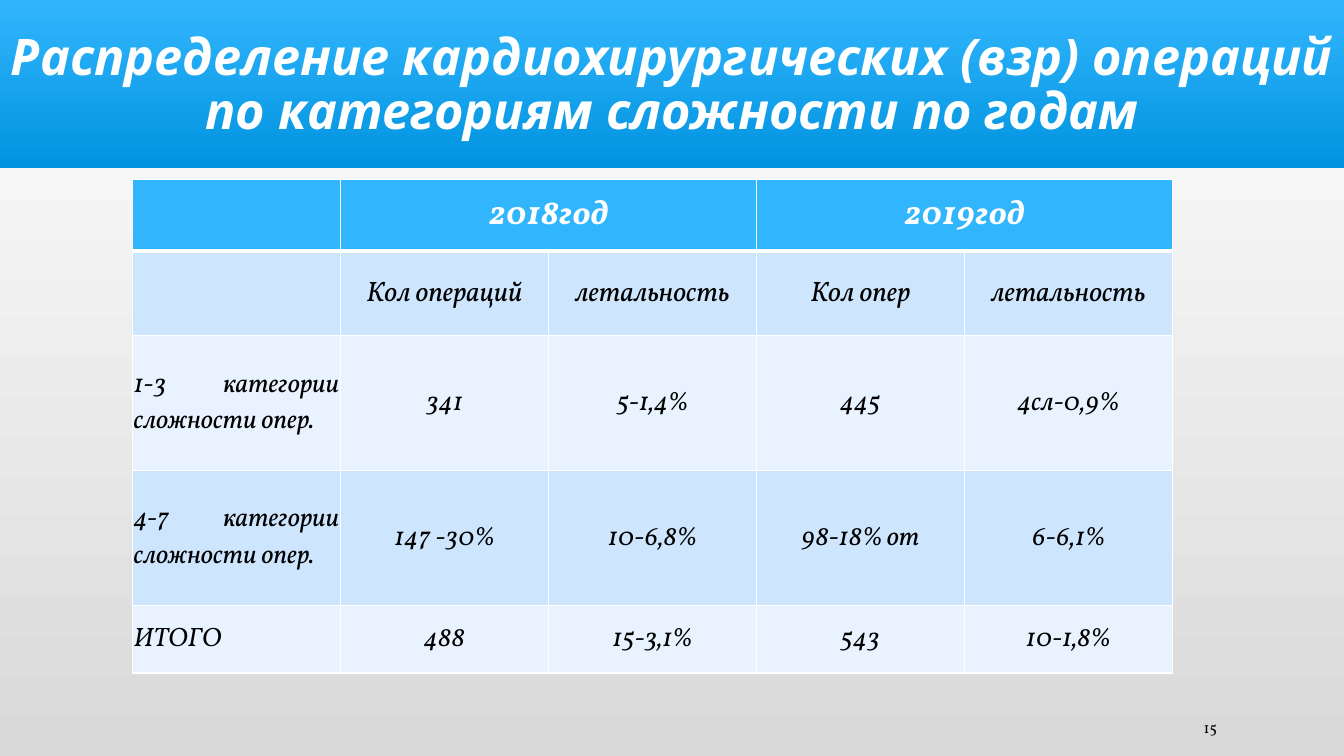
from pptx import Presentation
from pptx.dml.color import RGBColor
from pptx.enum.shapes import MSO_SHAPE
from pptx.enum.text import MSO_ANCHOR, MSO_AUTO_SIZE, PP_ALIGN
from pptx.util import Cm, Pt
from lxml import etree

RECT = MSO_SHAPE.RECTANGLE
MIDDLE = MSO_ANCHOR.MIDDLE
FIXED = MSO_AUTO_SIZE.NONE
CENTER, RIGHT, JUSTIFY = PP_ALIGN.CENTER, PP_ALIGN.RIGHT, PP_ALIGN.JUSTIFY
NS = "http://schemas.openxmlformats.org/drawingml/2006/main"

# Content
TITLE = "Распределение кардиохирургических (взр) операций по категориям сложности по годам"
ROWS = [
    ("", "2018год", "", "2019год", ""),
    ("", "Кол операций", "летальность", "Кол опер", "летальность"),
    ("1-3 категории сложности опер.", "341", "5-1,4%", "445", "4сл-0,9%"),
    ("4-7 категории сложности опер.", "147 -30%", "10-6,8%", "98-18% от", "6-6,1%"),
    ("ИТОГО", "488", "15-3,1%", "543", "10-1,8%"),
]
PAGE = "15"


class Theme:
    head_font, body_font = "Open Sans", "Vollkorn"
    white, black = "FFFFFF", "000000"
    band = ("31B6FD", "0293E0")
    back = ("FFFFFF", "D9D9D9")
    header = "31B6FD"
    stripes = ("CEE5FE", "E8F3FF")
    title_size, page_size = 36, 11
    row_sizes = (24, 20, 19, 19, 19)
    thin, thick = 1, 3


# Geometry in cm
WIDTH, HEIGHT = 33.87, 19.05
BAND = 4.23
COL = 5.24
HEIGHTS = (1.8, 2.13, 3.4, 3.4, 1.7)


def shade(fill, colors):
    """Vertical gradient from the first colour at the top to the second."""
    fill.gradient()
    fill.gradient_angle = 270
    for stop, color in zip(fill.gradient_stops, colors):
        stop.color.rgb = RGBColor.from_string(color)


def write(frame, text, align, font, size, color, bold=False, italic=False):
    frame.text = text
    frame.word_wrap = True
    frame.vertical_anchor = MIDDLE
    par = frame.paragraphs[0]
    par.alignment = align
    for run in par.runs:
        run.font.name, run.font.size = font, Pt(size)
        run.font.bold, run.font.italic = bold, italic
        run.font.color.rgb = RGBColor.from_string(color)
    return par


def border(cell, top, bottom):
    """White cell lines, placed ahead of the fill as the schema asks."""
    props = cell._tc.get_or_add_tcPr()
    sides = (("L", Theme.thin), ("R", Theme.thin), ("T", top), ("B", bottom))
    for spot, (side, width) in enumerate(sides):
        line = etree.Element(f"{{{NS}}}ln{side}", w=str(Pt(width)))
        fill = etree.SubElement(line, f"{{{NS}}}solidFill")
        etree.SubElement(fill, f"{{{NS}}}srgbClr", val=Theme.white)
        props.insert(spot, line)


def add_grid(slide):
    shape = slide.shapes.add_table(len(ROWS), len(ROWS[0]), Cm(3.34), Cm(4.53),
                                   Cm(COL * len(ROWS[0])), Cm(sum(HEIGHTS)))
    table = shape.table
    for col in table.columns:
        col.width = Cm(COL)
    for r, row in enumerate(ROWS):
        table.rows[r].height = Cm(HEIGHTS[r])
        head = r == 0
        for c, text in enumerate(row):
            cell = table.cell(r, c)
            align = CENTER if c else JUSTIFY
            write(cell.text_frame, text, align, Theme.body_font, Theme.row_sizes[r],
                  Theme.white if head else Theme.black, head, True)
            cell.vertical_anchor = MIDDLE
            cell.margin_left = cell.margin_right = cell.margin_top = Cm(0.03)
            cell.margin_bottom = 0
            cell.fill.solid()
            color = Theme.header if head else Theme.stripes[(r - 1) % 2]
            cell.fill.fore_color.rgb = RGBColor.from_string(color)
            border(cell, Theme.thick if r == 1 else Theme.thin,
                   Theme.thick if head else Theme.thin)
    # Each year spans two columns
    for c in (1, 3):
        table.cell(0, c).merge(table.cell(0, c + 1))


def main():
    deck = Presentation()
    deck.slide_width, deck.slide_height = Cm(WIDTH), Cm(HEIGHT)
    slide = deck.slides.add_slide(deck.slide_layouts[5])
    shade(slide.background.fill, Theme.back)

    # Band behind the title
    band = slide.shapes.add_shape(RECT, 0, 0, Cm(WIDTH), Cm(BAND))
    band.shadow.inherit = False
    band.line.fill.background()
    shade(band.fill, Theme.band)
    slide.shapes.element.insert(2, band.element)

    # Title
    title = slide.shapes.title
    title.left, title.top, title.width, title.height = 0, Cm(0.33), Cm(WIDTH), Cm(3.68)
    par = write(title.text_frame, TITLE, CENTER, Theme.head_font, Theme.title_size,
                Theme.white, True, True)
    par.line_spacing = 0.9
    title.text_frame.auto_size = FIXED
    title.text_frame.margin_left = title.text_frame.margin_right = Cm(0.2)

    add_grid(slide)

    # Page number
    page = slide.shapes.add_textbox(Cm(28.58), Cm(18.01), Cm(2.34), Cm(0.66))
    write(page.text_frame, PAGE, RIGHT, Theme.body_font, Theme.page_size, Theme.black)

    deck.save("out.pptx")


if __name__ == "__main__":
    main()
